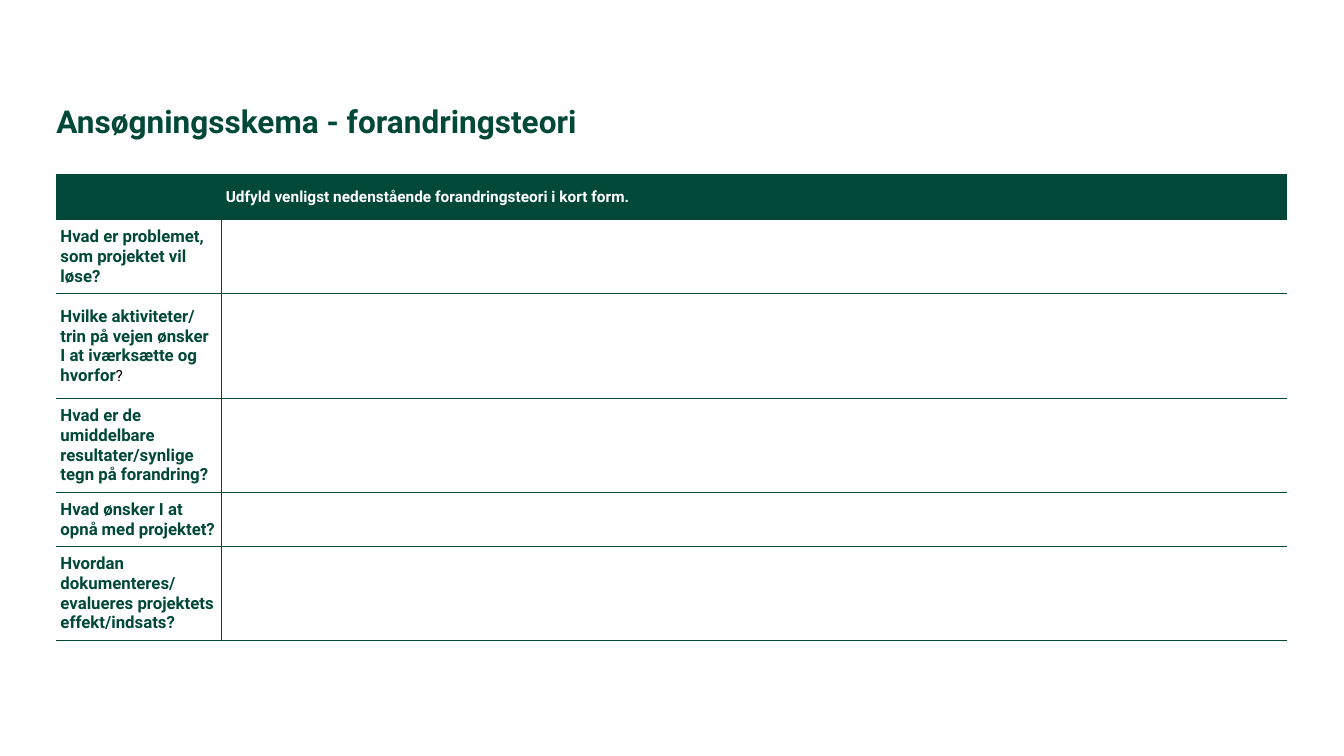
from lxml import etree
from pptx import Presentation
from pptx.dml.color import RGBColor
from pptx.enum.text import MSO_ANCHOR, PP_ALIGN
from pptx.oxml.ns import qn
from pptx.util import Inches, Pt

TOP, MIDDLE = MSO_ANCHOR.TOP, MSO_ANCHOR.MIDDLE
LEFT = PP_ALIGN.LEFT
FONT = "Roboto"
GREEN, WHITE, BLACK = "004837", "FFFFFF", "000000"
WIDTH, HEIGHT = 13.33, 7.5
MARGIN = 0.56
CONTENT = WIDTH - 2 * MARGIN
TITLE_TOP, TABLE_TOP = 1.05, 1.73
QUESTION_COL = 1.64
HEADER_ROW = 0.39
HEADER = "Udfyld venligst nedenstående forandringsteori i kort form."
BOLD = (12, GREEN, True)
QUESTIONS = [
    (0.74, [("Hvad er problemet, som projektet vil løse?", BOLD)]),
    (1.04, [("Hvilke aktiviteter/ trin på vejen ønsker I at iværksætte og hvorfor", BOLD),
            ("?", (11, BLACK, False))]),
    (0.93, [("Hvad er de umiddelbare resultater/synlige tegn på forandring?", BOLD)]),
    (0.54, [("Hvad ønsker I at opnå", BOLD), (" ", (11, GREEN, False)),
            ("med projektet?", BOLD)]),
    (0.93, [("Hvordan dokumenteres/\nevalueres projektets effekt/indsats?", BOLD)]),
]


def color(value):
    return RGBColor.from_string(value)


def add_runs(p, runs):
    p.alignment = LEFT
    for text, (size, ink, bold) in runs:
        for i, line in enumerate(text.split("\n")):
            if i:
                p.add_line_break()
            r = p.add_run()
            r.text = line
            r.font.name = FONT
            r.font.size = Pt(size)
            r.font.bold = bold
            r.font.color.rgb = color(ink)


def set_borders(cell, sides):
    tc_pr = cell._tc.get_or_add_tcPr()
    for side in "LRTB":
        ln = etree.SubElement(tc_pr, qn(f"a:ln{side}"), w=str(Pt(0.5)))
        if side in sides:
            fill = etree.SubElement(ln, qn("a:solidFill"))
            etree.SubElement(fill, qn("a:srgbClr"), val=GREEN)
        else:
            etree.SubElement(ln, qn("a:noFill"))


def format_cell(cell, runs, sides, fill=None, pad=0.07):
    set_borders(cell, sides)
    if fill:
        cell.fill.solid()
        cell.fill.fore_color.rgb = color(fill)
    else:
        cell.fill.background()
    cell.vertical_anchor = MIDDLE
    cell.margin_left = cell.margin_right = Inches(0.04)
    cell.margin_top = cell.margin_bottom = Inches(pad)
    add_runs(cell.text_frame.paragraphs[0], runs)


def add_title(s, text):
    sp = s.shapes.title
    sp.left, sp.top = Inches(MARGIN), Inches(TITLE_TOP)
    sp.width, sp.height = Inches(CONTENT), Inches(TABLE_TOP - TITLE_TOP)
    tf = sp.text_frame
    tf.word_wrap = True
    tf.vertical_anchor = TOP
    tf.margin_left = tf.margin_right = tf.margin_top = tf.margin_bottom = 0
    p = tf.paragraphs[0]
    p.line_spacing = 0.9
    add_runs(p, [(text, (22.5, GREEN, True))])


def add_form(s):
    heights = [HEADER_ROW] + [height for height, _ in QUESTIONS]
    table = s.shapes.add_table(len(heights), 2, Inches(MARGIN), Inches(TABLE_TOP),
                               Inches(CONTENT), Inches(sum(heights))).table
    table.horz_banding = False
    for col, width in zip(table.columns, (QUESTION_COL, CONTENT - QUESTION_COL)):
        col.width = Inches(width)
    for row, height in zip(table.rows, heights):
        row.height = Inches(height)
    format_cell(table.cell(0, 0), [], "TRB", GREEN)
    format_cell(table.cell(0, 1), [(HEADER, (11, WHITE, True))], "LTB", GREEN, 0.08)
    for i, (_, runs) in enumerate(QUESTIONS, 1):
        format_cell(table.cell(i, 0), runs, "TRB")
        format_cell(table.cell(i, 1), [], "LTB")


def main():
    prs = Presentation()
    prs.slide_width, prs.slide_height = Inches(WIDTH), Inches(HEIGHT)
    s = prs.slides.add_slide(prs.slide_layouts[5])
    add_title(s, "Ansøgningsskema - forandringsteori")
    add_form(s)
    prs.save("out.pptx")


if __name__ == "__main__":
    main()
